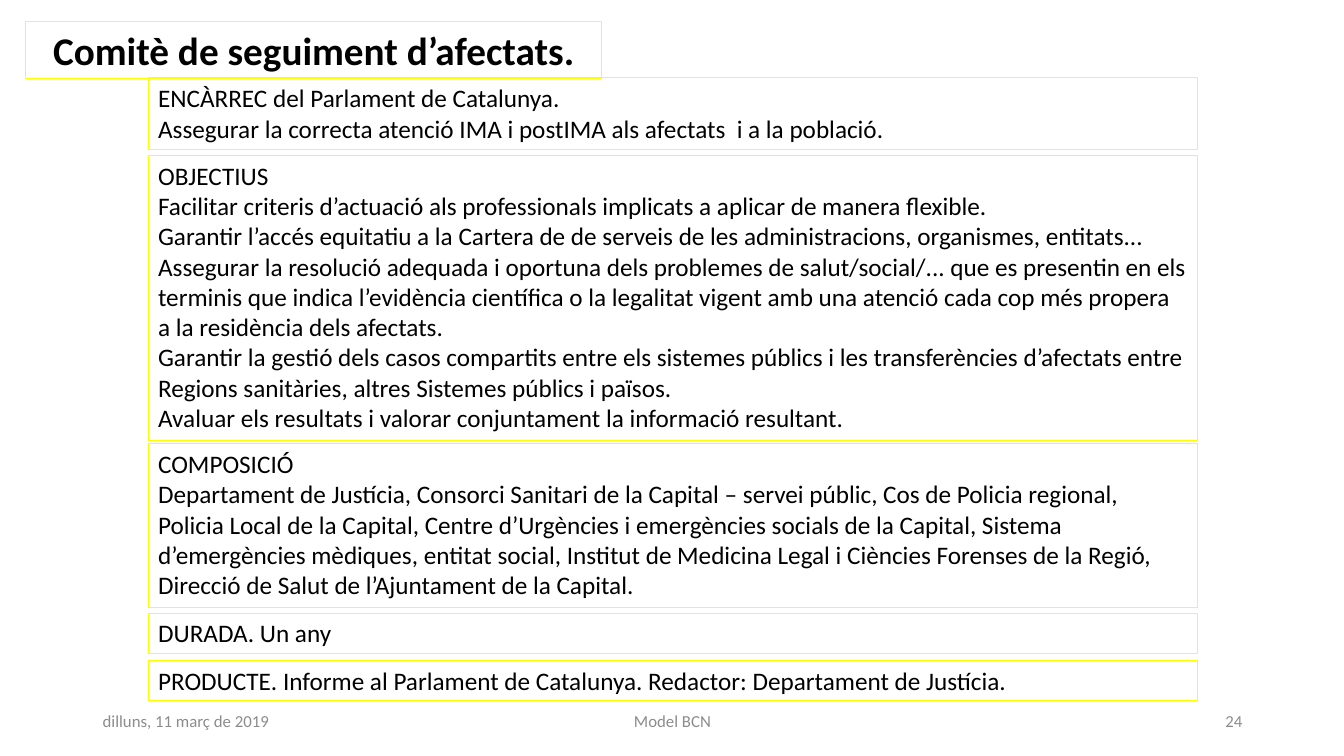
from pptx import Presentation
from pptx.dml.color import RGBColor
from pptx.enum.shapes import MSO_SHAPE
from pptx.enum.text import MSO_ANCHOR, MSO_AUTO_SIZE, PP_ALIGN
from pptx.util import Emu, Pt

PX = 9144  # 100 px to the inch
FONT = "Calibri"
BLACK, GREY, YELLOW = "000000", "8C8C8C", "FFFF00"

TITLE = "Comitè de seguiment d’afectats."
BODY_LEFT, BODY_WIDTH = 147, 1040
# top, height, paragraphs
SECTIONS = [
    (77, 71, [
        "ENCÀRREC del Parlament de Catalunya.",
        "Assegurar la correcta atenció IMA i postIMA als afectats  i a la població.",
    ]),
    (154, 283, [
        "OBJECTIUS",
        "Facilitar criteris d’actuació als professionals implicats a aplicar de manera flexible.",
        "Garantir l’accés equitatiu a la Cartera de de serveis de les administracions, "
        "organismes, entitats...",
        "Assegurar la resolució adequada i oportuna dels problemes de salut/social/... "
        "que es presentin en els terminis que indica l’evidència científica o la legalitat "
        "vigent amb una atenció cada cop més propera a la residència dels afectats.",
        "Garantir la gestió dels casos compartits entre els sistemes públics i les "
        "transferències d’afectats entre Regions sanitàries, altres Sistemes públics i països.",
        "Avaluar els resultats i valorar conjuntament la informació resultant.",
    ]),
    (440, 162, [
        "COMPOSICIÓ",
        "Departament de Justícia, Consorci Sanitari de la Capital – servei públic, Cos de Policia "
        "regional, Policia Local de la Capital, Centre d’Urgències i emergències socials "
        "de la Capital, Sistema d’emergències mèdiques, entitat social, Institut de Medicina "
        "Legal i Ciències Forenses de la Regió, Direcció de Salut de l’Ajuntament de la Capital.",
    ]),
    (608, 40, ["DURADA. Un any"]),
    (655, 40, ["PRODUCTE. Informe al Parlament de Catalunya. Redactor: Departament de Justícia."]),
]
FOOTER_TOP, FOOTER_HEIGHT = 695, 40
# left, width, text, alignment
FOOTERS = [
    (92, 300, "dilluns, 11 març de 2019", PP_ALIGN.LEFT),
    (442, 450, "Model BCN", PP_ALIGN.CENTER),
    (942, 300, "24", PP_ALIGN.RIGHT),
]


def rgb(color):
    return RGBColor.from_string(color)


def px(*lengths):
    return [Emu(n * PX) for n in lengths]


def write(sp, lines, size, color=BLACK, align=PP_ALIGN.LEFT, anchor=MSO_ANCHOR.TOP, bold=False):
    tf = sp.text_frame
    tf.word_wrap = True
    tf.vertical_anchor = anchor
    tf.text = "\n".join(lines)
    for p in tf.paragraphs:
        p.alignment = align
        for r in p.runs:
            r.font.name = FONT
            r.font.size = Pt(size)
            r.font.bold = bold
            r.font.color.rgb = rgb(color)


def add_box(s, box, line_width):
    """Add an unfilled rectangle with a yellow outline that grows with its text."""
    sp = s.shapes.add_shape(MSO_SHAPE.RECTANGLE, *px(*box))
    sp.shadow.inherit = False
    sp.fill.background()
    sp.line.color.rgb = rgb(YELLOW)
    sp.line.width = Pt(line_width)
    sp.text_frame.auto_size = MSO_AUTO_SIZE.SHAPE_TO_FIT_TEXT
    return sp


def main():
    prs = Presentation()
    prs.slide_width, prs.slide_height = px(1333, 750)
    s = prs.slides.add_slide(prs.slide_layouts[6])

    for left, width, text, align in FOOTERS:
        sp = s.shapes.add_textbox(*px(left, FOOTER_TOP, width, FOOTER_HEIGHT))
        write(sp, [text], 12, GREY, align, MSO_ANCHOR.MIDDLE)

    title = add_box(s, (25, 21, 572, 57), 0.75)
    write(title, [TITLE], 28, align=PP_ALIGN.CENTER, bold=True)

    for top, height, lines in SECTIONS:
        write(add_box(s, (BODY_LEFT, top, BODY_WIDTH, height), 0.25), lines, 18)

    prs.save("out.pptx")


if __name__ == "__main__":
    main()
